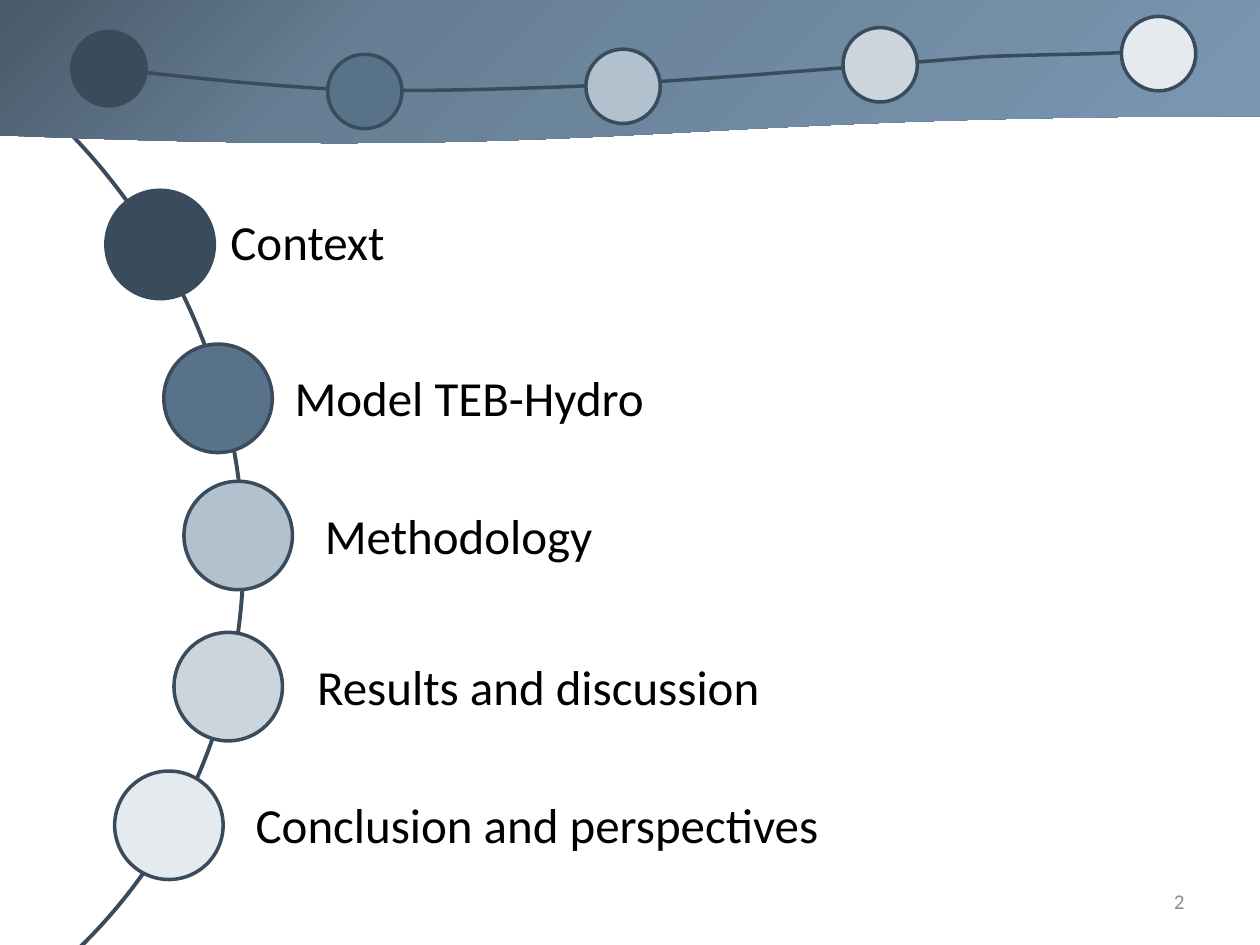
from copy import deepcopy
from pptx import Presentation
from pptx.util import Pt
from pptx.dml.color import RGBColor as Rgb
from pptx.enum.shapes import MSO_SHAPE as Kind
from pptx.enum.text import MSO_ANCHOR as Anchor, MSO_AUTO_SIZE as Fit, PP_ALIGN as Align
from pptx.oxml.ns import qn

DARK = "3A4C5B"
BIG, SMALL = 62, 42.5
TOPICS = [
    ("Context", DARK, (60.5, 108.7), (124.6, 117.4, 451.4), (41, 18)),
    ("Model TEB-Hydro", "577289", (93.6, 196.6), (161.3, 206.6, 465.1), (187.2, 31)),
    ("Methodology", "B2C1CE", (105.1, 275), (178.6, 285.1, 465.1), (334.8, 28.1)),
    ("Results and discussion", "CBD5DE", (99.4, 361.4), (174.2, 371.5, 311.8), (481.7, 15.8)),
    ("Conclusion and perspectives", "E5EAEF", (65.5, 440.6), (139, 450.7, 430.6), (640.8, 9.4)),
]
START = (60.5, 38.9)
BENDS = [
    ((105.1, 43.9), (150.5, 49), (193.7, 51.1)),
    ((236.9, 52.6), (278.6, 51.1), (320.4, 49.7)),
    ((362.2, 48.2), (443.5, 41.8), (443.5, 41.8)),
    ((443.5, 41.8), (563, 32.4), (563, 32.4)),
    ((597.6, 31), (633.6, 31), (649.4, 29.5)),
]


def color(code):
    return Rgb.from_string(code)


def trace(start, bends, steps=12):
    for one, two, end in bends:
        for step in range(1, steps + 1):
            t = step / steps
            u = 1 - t
            yield tuple(
                Pt(u**3 * a + 3 * u * u * t * b + 3 * u * t * t * c + t**3 * d)
                for a, b, c, d in zip(start, one, two, end)
            )
        start = end


class Deck:
    font = "Calibri"
    ink = DARK

    def __init__(self, slide):
        self.slide = slide

    def shape(self, kind, x, y, w, h):
        shape = self.slide.shapes.add_shape(kind, Pt(x), Pt(y), Pt(w), Pt(h))
        shape.shadow.inherit = False
        return shape

    def edge(self, shape, width=2):
        shape.line.color.rgb = color(self.ink)
        shape.line.width = Pt(width)

    def arc(self, x, y, w, h, turn, ends):
        arc = self.shape(Kind.ARC, x, y, w, h)
        arc.rotation = turn
        arc.adjustments[0], arc.adjustments[1] = ends
        arc.fill.background()
        self.edge(arc, 2.25)

    def banner(self, w, h, stops):
        wave = self.shape(Kind.FLOWCHART_DOCUMENT, 0, 0, w, h)
        wave.line.fill.background()
        wave.fill.gradient()
        wave.fill.gradient_angle = 315
        group = wave.element.spPr.find(".//" + qn("a:gsLst"))
        while len(group) < len(stops):
            group.append(deepcopy(group[-1]))
        for stop, (place, code) in zip(wave.fill.gradient_stops, stops):
            stop.position = place
            stop.color.rgb = color(code)

    def dot(self, x, y, size, code):
        dot = self.shape(Kind.OVAL, x, y, size, size)
        dot.fill.solid()
        dot.fill.fore_color.rgb = color(code)
        self.edge(dot)

    def curve(self, start, bends):
        pen = self.slide.shapes.build_freeform(Pt(start[0]), Pt(start[1]))
        pen.add_line_segments(list(trace(start, bends)), close=False)
        curve = pen.convert_to_shape()
        curve.shadow.inherit = False
        curve.fill.background()
        self.edge(curve)

    def text(self, words, x, y, w, h, size, code="000000", align=Align.LEFT,
             anchor=Anchor.TOP, fit=Fit.NONE):
        frame = self.slide.shapes.add_textbox(Pt(x), Pt(y), Pt(w), Pt(h)).text_frame
        frame.word_wrap = True
        frame.auto_size = fit
        frame.vertical_anchor = anchor
        line = frame.paragraphs[0]
        line.text = words
        line.alignment = align
        line.font.name = self.font
        line.font.size = Pt(size)
        line.font.color.rgb = color(code)


def main():
    show = Presentation()
    show.slide_width, show.slide_height = Pt(720), Pt(540)
    deck = Deck(show.slides.add_slide(show.slide_layouts[6]))

    deck.arc(-537.8, -25.2, 684.7, 647.3, 40.6, (163.65, 4.69))
    deck.banner(720, 82.8, [(0, "495A69"), (0.3, "677F95"), (1, "7A97B1")])
    for words, code, spot, box, top in TOPICS:
        deck.dot(*spot, BIG, code)
        deck.text(words, *box, 41, 28, fit=Fit.SHAPE_TO_FIT_TEXT)
    deck.curve(START, BENDS)
    for words, code, spot, box, top in reversed(TOPICS):
        deck.dot(*top, SMALL, code)
    deck.text("2", 516, 500.5, 168, 28.8, 12, "8C8C8C", Align.RIGHT, Anchor.MIDDLE)

    show.save("out.pptx")


if __name__ == "__main__":
    main()
